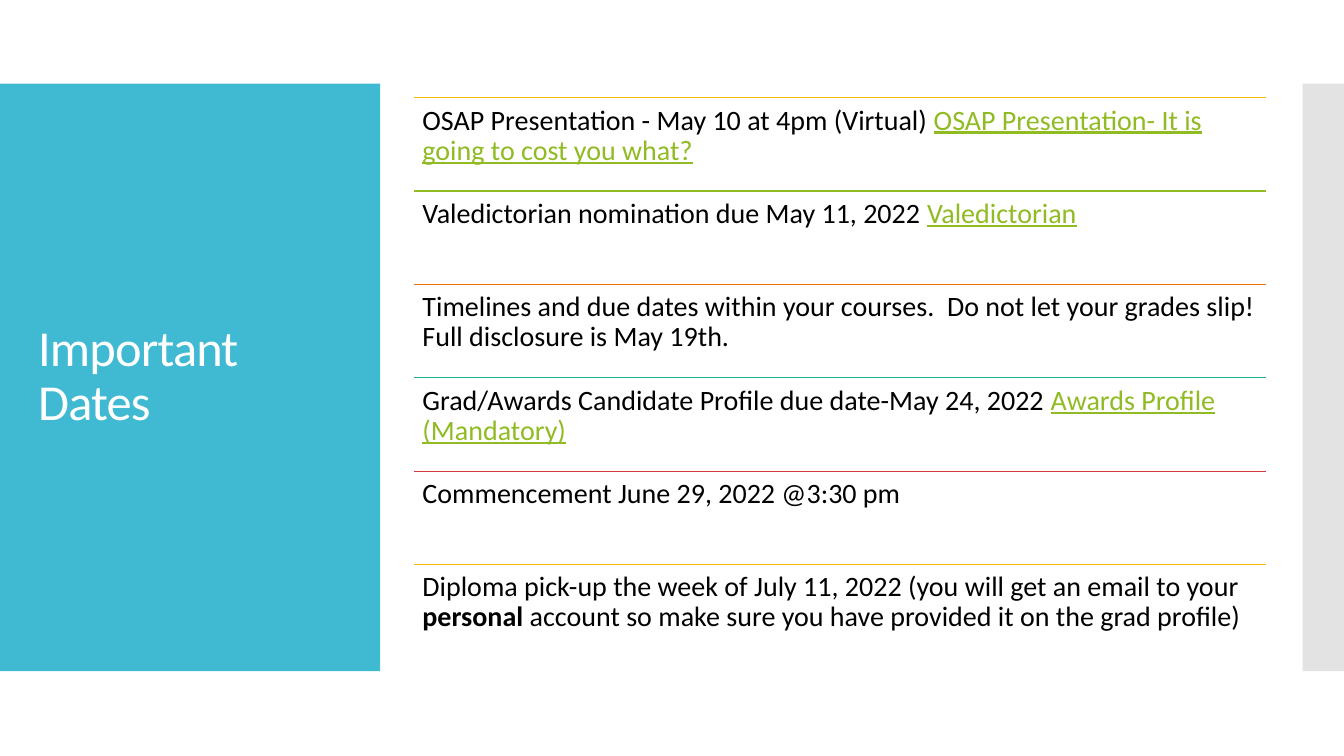
from dataclasses import dataclass

from lxml import etree
from pptx import Presentation
from pptx import util as u
from pptx.dml.color import RGBColor
from pptx.enum import shapes, text
from pptx.oxml.ns import qn


@dataclass(frozen=True)
class Theme:
    """Colours, font and type sizes of the slide."""
    font: str = "Calibri"
    title_size: int = 36
    body_size: int = 20
    rule_width: float = 0.85
    white: str = "FFFFFF"
    ink: str = "000000"
    panel: str = "40BAD2"
    strip: str = "C8C8C8"
    yellow: str = "FAB900"
    green: str = "90BB23"
    orange: str = "EE7008"
    teal: str = "1AB39F"
    red: str = "D5393D"


class SlideBuilder:
    """Draws styled elements on the current slide."""

    def __init__(self, slide, theme):
        self.slide = slide
        self.theme = theme

    def panel(self, left, top, width, height, color, opacity=100):
        """Add a plain filled rectangle."""
        shape = self.slide.shapes.add_shape(
            shapes.MSO_SHAPE.RECTANGLE, *map(u.Inches, (left, top, width, height)))
        shape.shadow.inherit = False
        shape.fill.solid()
        shape.fill.fore_color.rgb = RGBColor.from_string(color)
        shape.line.fill.background()
        if opacity < 100:
            fill_color = shape.fill._xPr.find(qn("a:solidFill"))[0]
            etree.SubElement(fill_color, qn("a:alpha"), val=str(opacity * 1000))

    def rule(self, left, top, width, color):
        """Add a thin horizontal line."""
        line = self.slide.shapes.add_connector(
            shapes.MSO_CONNECTOR.STRAIGHT,
            *map(u.Inches, (left, top, left + width, top)))
        line.line.color.rgb = RGBColor.from_string(color)
        line.line.width = u.Pt(self.theme.rule_width)
        etree.SubElement(line._element.spPr, qn("a:effectLst"))

    def text_box(self, left, top, width, height, parts, size, color):
        """Add one paragraph made of (text, style) parts and return its shape."""
        shape = self.slide.shapes.add_textbox(
            *map(u.Inches, (left, top, width, height)))
        shape.text_frame.word_wrap = True
        paragraph = shape.text_frame.paragraphs[0]
        paragraph.line_spacing = 0.9
        for words, style in parts:
            run = paragraph.add_run()
            run.text = words
            run.font.name = self.theme.font
            run.font.size = u.Pt(size)
            link = style == "link"
            run.font.color.rgb = RGBColor.from_string(
                self.theme.green if link else color)
            if link:
                run.font.underline = True
            if style == "bold":
                run.font.bold = True
        return shape

    def title(self, left, top, width, height, words):
        """Add the vertically centred title with tightened letters."""
        shape = self.text_box(left, top, width, height, [(words, "plain")],
                              self.theme.title_size, self.theme.white)
        shape.text_frame.vertical_anchor = text.MSO_ANCHOR.MIDDLE
        run = shape.text_frame.paragraphs[0].runs[0]
        run.font._element.set("spc", "-60")

    def entry(self, left, top, width, height, parts, color):
        """Add a dated entry below its coloured rule."""
        self.rule(left, top, width, color)
        shape = self.text_box(left, top, width, height, parts,
                              self.theme.body_size, self.theme.ink)
        frame = shape.text_frame
        frame.margin_left = frame.margin_right = u.Inches(0.08)
        frame.margin_top = frame.margin_bottom = u.Inches(0.08)


def main():
    """Build and save the important dates slide."""
    theme = Theme()
    presentation = Presentation()
    presentation.slide_width = u.Inches(13.33)
    presentation.slide_height = u.Inches(7.5)
    slide = presentation.slides.add_slide(presentation.slide_layouts[6])
    builder = SlideBuilder(slide, theme)

    builder.panel(0, 0.83, 3.77, 5.83, theme.panel)
    builder.panel(12.92, 0.83, 0.41, 5.83, theme.strip, opacity=50)
    builder.title(0.28, 1.23, 3.22, 5.03, "Important Dates")

    entries = [
        (theme.yellow, [
            ("OSAP Presentation - May 10 at 4pm (Virtual) ", "plain"),
            ("OSAP Presentation- It is going to cost you what?", "link")]),
        (theme.green, [
            ("Valedictorian nomination due May 11, 2022 ", "plain"),
            ("Valedictorian", "link")]),
        (theme.orange, [
            ("Timelines and due dates within your courses.  Do not let your "
             "grades slip! Full disclosure is May 19th.", "plain")]),
        (theme.teal, [
            ("Grad/Awards Candidate Profile due date-May 24, 2022 ", "plain"),
            ("Awards Profile (Mandatory)", "link")]),
        (theme.red, [("Commencement June 29, 2022 @3:30 pm", "plain")]),
        (theme.yellow, [
            ("Diploma pick-up the week of July 11, 2022 "
             "(you will get an email to your ", "plain"),
            ("personal", "bold"),
            (" account so make sure you have provided it "
             "on the grad profile)", "plain")]),
    ]
    first_top, last_top = 0.97, 5.6
    pitch = (last_top - first_top) / (len(entries) - 1)
    for index, (color, parts) in enumerate(entries):
        builder.entry(4.11, first_top + index * pitch, 8.45, pitch, parts, color)

    presentation.save("out.pptx")


if __name__ == "__main__":
    main()
